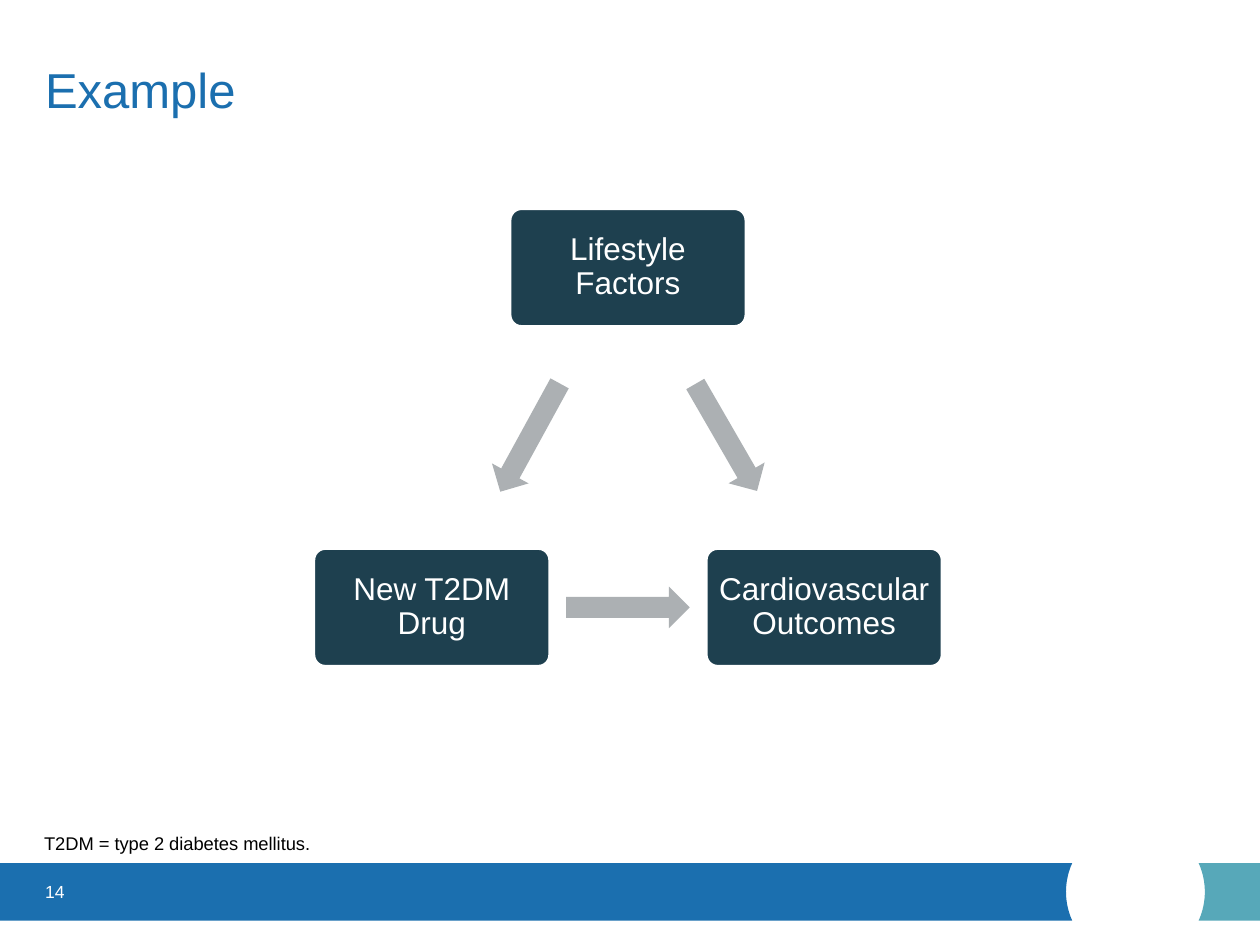
import math

from lxml import etree
from pptx import Presentation
from pptx.dml.color import RGBColor
from pptx.enum import shapes, text
from pptx.oxml.ns import qn
from pptx.util import Cm, Pt

BLUE = RGBColor(0x1B, 0x6F, 0xAF)
TEAL = RGBColor(0x45, 0x9F, 0xB2)
NAVY = RGBColor(0x1E, 0x40, 0x4F)
GRAY = RGBColor(0xAC, 0xB0, 0xB3)
WHITE = RGBColor(0xFF, 0xFF, 0xFF)
BLACK = RGBColor(0, 0, 0)
FONT = "Arial"


def write(shape, words, size, color, align=text.PP_ALIGN.LEFT,
          anchor=text.MSO_ANCHOR.MIDDLE, spacing=1.0, inset=0.25):
    frame = shape.text_frame
    frame.word_wrap = True
    frame.auto_size = text.MSO_AUTO_SIZE.NONE
    frame.vertical_anchor = anchor
    frame.margin_left = frame.margin_right = Cm(inset)
    frame.margin_top = frame.margin_bottom = Cm(0.13)
    para = frame.paragraphs[0]
    para.alignment = align
    para.line_spacing = spacing
    span = para.add_run()
    span.text = words
    span.font.name = FONT
    span.font.size = Pt(size)
    span.font.color.rgb = color


def paint(shape, color):
    shape.shadow.inherit = False
    shape.fill.solid()
    shape.fill.fore_color.rgb = color
    shape.line.fill.background()


def add_label(page, left, top, width, height, words, size, color, **style):
    box = page.shapes.add_textbox(Cm(left), Cm(top), Cm(width), Cm(height))
    write(box, words, size, color, **style)


def place_title(page, left, top, width, height):
    title = page.shapes.title
    title.left, title.top = Cm(left), Cm(top)
    title.width, title.height = Cm(width), Cm(height)
    write(title, "Example", 28, BLUE)


def add_footer(page, left, top, width, height, number):
    radius = 1.4
    center_x, center_y = left + width - 2.51, top + height / 2
    reach = math.asin(height / 2 / radius)
    steps = 16
    angles = [reach * (2 * step / steps - 1) for step in range(steps + 1)]
    for side, edge, color in ((-1, left, BLUE), (1, left + width, TEAL)):
        arc = [(Cm(center_x + side * radius * math.cos(angle)),
                Cm(center_y + radius * math.sin(angle))) for angle in angles]
        builder = page.shapes.build_freeform(Cm(edge), Cm(top))
        builder.add_line_segments(arc + [(Cm(edge), Cm(top + height))], close=True)
        band = builder.convert_to_shape()
        paint(band, color)
        if color == TEAL:
            tint = band.fill._xPr.find(qn("a:solidFill"))[0]
            etree.SubElement(tint, qn("a:alpha")).set("val", "90000")
    add_label(page, left + 0.66, top, 5.92, height, number, 10, WHITE)


def add_node(page, center_x, center_y, width, height, words):
    node = page.shapes.add_shape(
        shapes.MSO_SHAPE.ROUNDED_RECTANGLE, Cm(center_x - width / 2),
        Cm(center_y - height / 2), Cm(width), Cm(height))
    node.adjustments[0] = 0.1
    paint(node, NAVY)
    node.line.color.rgb = WHITE
    node.line.width = Pt(2)
    write(node, words, 18, WHITE, align=text.PP_ALIGN.CENTER, spacing=0.9, inset=0.05)


def add_arrow(page, start, end, rotation):
    width, height = 2.49, 0.84
    center_x, center_y = ((a + b) / 2 for a, b in zip(start, end))
    arrow = page.shapes.add_shape(
        shapes.MSO_SHAPE.RIGHT_ARROW, Cm(center_x - width / 2),
        Cm(center_y - height / 2), Cm(width), Cm(height))
    arrow.rotation = rotation
    paint(arrow, GRAY)


def add_triangle(page, left, top, width, height):
    node_width, node_height = 4.77, 2.39
    low = top + height - node_height / 2
    factors = (left + width / 2, top + node_height / 2)
    outcomes = (left + width - node_width / 2, low)
    drug = (left + node_width / 2, low)
    for center, words in ((factors, "Lifestyle Factors"),
                          (outcomes, "Cardiovascular Outcomes"),
                          (drug, "New T2DM Drug")):
        add_node(page, *center, node_width, node_height, words)
    add_arrow(page, factors, outcomes, 60)
    add_arrow(page, drug, outcomes, 0)
    add_arrow(page, factors, drug, 118.7)


def main():
    deck = Presentation()
    deck.slide_width, deck.slide_height = Cm(25.4), Cm(19.05)
    page = deck.slides.add_slide(deck.slide_layouts[5])
    add_footer(page, 0, 17.4, 25.4, 1.16, "14")
    add_triangle(page, 6.32, 4.2, 12.68, 9.24)
    add_label(page, 0.64, 16.48, 24.08, 0.86, "T2DM = type 2 diabetes mellitus.",
              10.5, BLACK, anchor=text.MSO_ANCHOR.BOTTOM)
    place_title(page, 0.66, 0.51, 20.62, 2.57)
    deck.save("out.pptx")


if __name__ == "__main__":
    main()
